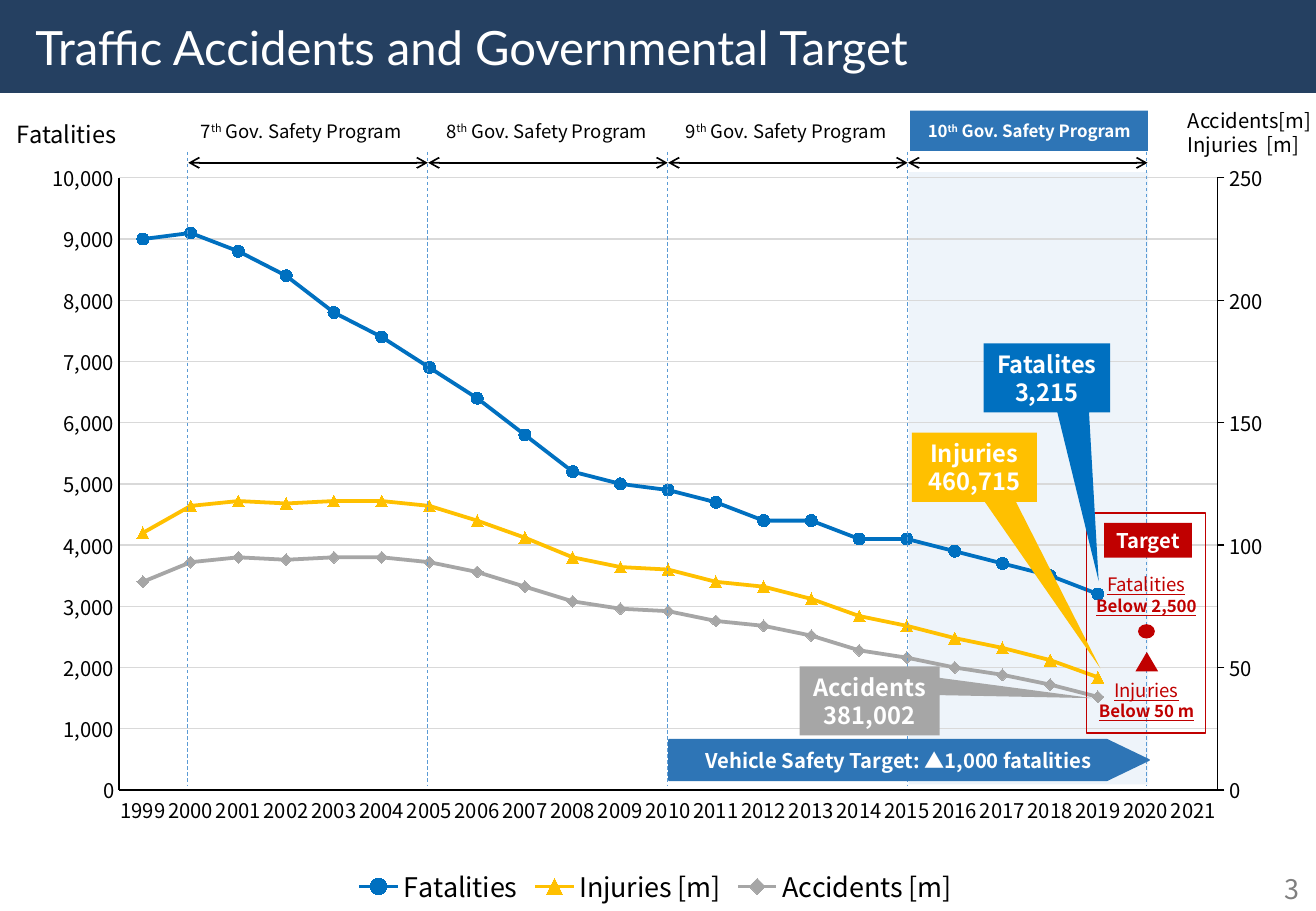
import copy

import pptx
import pptx.chart.axis
import pptx.chart.data
import pptx.dml.color
import pptx.enum.chart
import pptx.enum.dml
import pptx.enum.shapes
import pptx.enum.text
import pptx.oxml.ns
import pptx.oxml.xmlchemy
import pptx.util

Pt = pptx.util.Pt
SHAPE = pptx.enum.shapes.MSO_SHAPE
ALIGN = pptx.enum.text.PP_ALIGN
TICK = pptx.enum.chart.XL_TICK_MARK
MARK = pptx.enum.chart.XL_MARKER_STYLE
qn = pptx.oxml.ns.qn

HUES = {"navy": "254061", "white": "FFFFFF", "black": "000000", "gray": "808080",
        "pale": "DEEBF7", "blue": "0070C0", "gold": "FFC000", "silver": "A6A6A6",
        "grid": "D9D9D9", "steel": "2E75B6", "sky": "5B9BD5", "red": "C00000"}
FONT = "Noto Sans CJK JP"


def hue(name):
    return pptx.dml.color.RGBColor.from_string(HUES[name])


def node(root, tag, **attrs):
    """Append a child element with the given attributes."""
    child = pptx.oxml.xmlchemy.OxmlElement(tag)
    for key, val in attrs.items():
        child.set(key, str(val))
    root.append(child)
    return child


class Deck:
    """Holds the style and the current slide."""

    def __init__(self, wide, high):
        self.prs = pptx.Presentation()
        self.prs.slide_width, self.prs.slide_height = Pt(wide), Pt(high)
        self.slide = self.prs.slides.add_slide(self.prs.slide_layouts[5])

    def style(self, font, size, color, bold=False, line=False, face=FONT):
        font.name, font.size, font.bold = face, Pt(size), bold
        font.underline = line or None
        font.color.rgb = hue(color)

    def stroke(self, line, color, width):
        line.color.rgb = hue(color)
        line.width = Pt(width)

    def words(self, shape, text, sizes, color, bold=(False,), line=False,
              align=ALIGN.CENTER, inset=0, wrap=False):
        """Fill a shape with text; '^' parts off a raised run."""
        frame = shape.text_frame
        frame.text = text.replace("^", "")
        frame.word_wrap = wrap
        frame.vertical_anchor = pptx.enum.text.MSO_ANCHOR.MIDDLE
        frame.margin_left = frame.margin_right = Pt(inset)
        frame.margin_top = frame.margin_bottom = Pt(0)
        for i, para in enumerate(frame.paragraphs):
            para.alignment = align
            parts = text.split("\n")[i].split("^")
            para.runs[0].text = parts[0]
            for part in parts[1:]:
                para.add_run().text = part
            for k, run in enumerate(para.runs):
                self.style(run.font, sizes[i % len(sizes)], color, bold[i % len(bold)], line)
                if k == 1:
                    run._r.get_or_add_rPr().set("baseline", "30000")

    def title(self, text, wide, high):
        box = self.slide.shapes.title
        box.left, box.top, box.width, box.height = Pt(0), Pt(0), Pt(wide), Pt(high)
        box.fill.solid()
        box.fill.fore_color.rgb = hue("navy")
        self.stroke(box.line, "navy", 0.75)
        self.words(box, text, [28], "white", align=ALIGN.LEFT, inset=21, wrap=True)
        self.style(box.text_frame.paragraphs[0].runs[0].font, 28, "white", face="Lato")

    def label(self, place, text, sizes, color="black", **more):
        box = self.slide.shapes.add_textbox(*map(Pt, place))
        self.words(box, text, sizes, color, **more)

    def shape(self, kind, place, fill=None, edge=None, adjust=(), clear=None):
        item = self.slide.shapes.add_shape(kind, *map(Pt, place))
        item.shadow.inherit = False
        for i, val in enumerate(adjust):
            item.adjustments[i] = val
        if fill:
            item.fill.solid()
            item.fill.fore_color.rgb = hue(fill)
        else:
            item.fill.background()
        if edge:
            self.stroke(item.line, edge, 1)
        else:
            item.line.fill.background()
        if clear:
            node(item._element.spPr.find(".//" + qn("a:srgbClr")), "a:alpha", val=clear * 1000)
        return item

    def line(self, ends, color, width, dash=False, heads=False):
        item = self.slide.shapes.add_connector(
            pptx.enum.shapes.MSO_CONNECTOR.STRAIGHT, *map(Pt, ends))
        self.stroke(item.line, color, width)
        if dash:
            item.line.dash_style = pptx.enum.dml.MSO_LINE.DASH
        if heads:
            for tag in ("a:headEnd", "a:tailEnd"):
                node(item.line._get_or_add_ln(), tag, type="arrow")
        node(item._element.spPr, "a:effectLst")

    def axis(self, axis):
        axis.major_tick_mark = axis.minor_tick_mark = TICK.NONE
        self.style(axis.tick_labels.font, 12, "black")
        self.stroke(axis.format.line, "black", 0.75)

    def scale(self, axis, top, step, form):
        axis.minimum_scale, axis.maximum_scale, axis.major_unit = 0, top, step
        axis.tick_labels.number_format = form
        axis.tick_labels.number_format_is_linked = False

    def chart(self, place, cats, rows, frame):
        data = pptx.chart.data.CategoryChartData()
        data.categories = cats
        for name, vals, _, _ in rows:
            data.add_series(name, vals + [None] * (len(cats) - len(vals)))
        chart = self.slide.shapes.add_chart(
            pptx.enum.chart.XL_CHART_TYPE.LINE_MARKERS, *map(Pt, place), data).chart
        self.style(chart.font, 12, "black")
        chart.has_title = False
        chart.has_legend = True
        chart.legend.position = pptx.enum.chart.XL_LEGEND_POSITION.BOTTOM
        chart.legend.include_in_layout = False
        self.style(chart.legend.font, 16, "black")
        chart.plots[0].vary_by_categories = False
        for series, (_, _, color, mark) in zip(chart.plots[0].series, rows):
            series.smooth = False
            self.stroke(series.format.line, color, 2.25)
            series.marker.style, series.marker.size = mark, 7
            series.marker.format.fill.solid()
            series.marker.format.fill.fore_color.rgb = hue(color)
            self.stroke(series.marker.format.line, color, 0.75)
        # Axes
        for axis in (chart.category_axis, chart.value_axis):
            self.axis(axis)
        chart.category_axis._element.find(".//" + qn("a:bodyPr")).set("rot", "0")
        self.scale(chart.value_axis, 10000, 1000, "#,##0")
        chart.value_axis.has_major_gridlines = True
        self.stroke(chart.value_axis.major_gridlines.format.line, "grid", 0.75)
        val = chart.value_axis._element
        if val.find(qn("c:crossBetween")) is None:
            cross = node(val, "c:crossBetween", val="between")
            val.find(qn("c:crosses")).addnext(cross)
        self.second(chart)
        # Plot area
        area = chart._chartSpace.find(".//" + qn("c:plotArea"))
        for old in area.findall(qn("c:layout")):
            area.remove(old)
        outer = node(area, "c:layout")
        area.insert(0, outer)
        spot = node(outer, "c:manualLayout")
        node(spot, "c:layoutTarget", val="inner")
        for key in ("xMode", "yMode"):
            node(spot, "c:" + key, val="edge")
        for key, num in zip("xywh", frame):
            node(spot, "c:" + key, val=num)

    def second(self, chart):
        """Move all but the first series to an axis on the right."""
        left = chart._chartSpace.find(".//" + qn("c:lineChart"))
        right = copy.deepcopy(left)
        left.addnext(right)
        for item in left.findall(qn("c:ser"))[1:]:
            left.remove(item)
        right.remove(right.find(qn("c:ser")))
        cat, val = chart.category_axis._element, chart.value_axis._element
        cat2, val2 = copy.deepcopy(cat), copy.deepcopy(val)
        val.addnext(val2)
        val2.addnext(cat2)
        for tag, num in zip(right.findall(qn("c:axId")), ("7001", "7002")):
            tag.set("val", num)
        for axis, own, other in ((cat2, "7001", "7002"), (val2, "7002", "7001")):
            axis.find(qn("c:axId")).set("val", own)
            axis.find(qn("c:crossAx")).set("val", other)
        pptx.chart.axis.CategoryAxis(cat2).visible = False
        axis = pptx.chart.axis.ValueAxis(val2)
        axis.has_major_gridlines = False
        axis.major_tick_mark = TICK.OUTSIDE
        self.scale(axis, 250, 50, r"#,##0_);[Red]\(#,##0\)")
        val2.find(qn("c:axPos")).set("val", "r")
        val2.find(qn("c:crosses")).set("val", "max")


def main():
    deck = Deck(780, 540)
    deck.title("Traffic Accidents and Governmental Target", 780, 55)
    deck.label((595, 516, 182, 22), "3", [16], "gray", align=ALIGN.RIGHT, inset=7)

    # Chart over the shaded current program
    deck.shape(SHAPE.RECTANGLE, (538.5, 102, 142, 363), "pale", clear=50)
    rows = [
        ("Fatalities", [9000, 9100, 8800, 8400, 7800, 7400, 6900, 6400, 5800, 5200, 5000,
                        4900, 4700, 4400, 4400, 4100, 4100, 3900, 3700, 3500, 3200],
         "blue", MARK.CIRCLE),
        ("Injuries [m]", [105, 116, 118, 117, 118, 118, 116, 110, 103, 95, 91,
                          90, 85, 83, 78, 71, 67, 62, 58, 53, 46], "gold", MARK.TRIANGLE),
        ("Accidents [m]", [85, 93, 95, 94, 95, 95, 93, 89, 83, 77, 74,
                           73, 69, 67, 63, 57, 54, 50, 47, 43, 38], "silver", MARK.DIAMOND)]
    deck.chart((10, 92, 757, 448), [str(year) for year in range(1999, 2022)], rows,
               (0.08, 0.03, 0.86, 0.81))

    # Safety programs
    start, step = 111, 142.2
    for i in range(4):
        left = start + 0.6 + i * step
        deck.line((left, 96.5, left + 142, 96.5), "black", 1, heads=True)
    for num, left in ((7, 116), (8, 261.5), (9, 403.5)):
        deck.label((left, 65.5, 136, 24.5), f"{num}^th^ Gov. Safety Program", [11],
                   align=ALIGN.LEFT, inset=3)
    now = deck.shape(SHAPE.RECTANGLE, (539.5, 65.5, 141, 24), "steel")
    deck.words(now, "10^th^ Gov. Safety Program", [10], "white", bold=[True])

    # Axis titles
    deck.label((10, 71, 60, 17), "Fatalities", [14], align=ALIGN.LEFT)
    deck.label((704, 64, 78, 29), "Accidents[m]\nInjuries  [m]", [12], align=ALIGN.LEFT)

    # Program limits
    for i in range(5):
        left = start + i * step
        deck.line((left, 90, left, 466), "sky", 0.5, dash=True)

    # Target
    for place, text in (((646, 340, 67, 25), "Fatalities\nBelow 2,500"),
                        ((648, 402.5, 63, 25), "Injuries\nBelow 50 m")):
        deck.label(place, text, [11, 10], "red", bold=[False, True], line=True)
    goal = deck.shape(SHAPE.RECTANGLE, (654.5, 310, 52, 20.5), "red")
    deck.words(goal, "Target", [12], "white", bold=[True])
    deck.shape(SHAPE.ISOSCELES_TRIANGLE, (673, 386.5, 13.5, 11.5), "red")
    deck.shape(SHAPE.OVAL, (674.5, 370, 10, 8.5), "red")
    deck.shape(SHAPE.RECTANGLE, (644, 304, 70.5, 130.5), edge="red")
    arrow = deck.shape(SHAPE.PENTAGON, (396.5, 438.5, 284.5, 24), "steel", "steel", [1.04])
    deck.words(arrow, "Vehicle Safety Target: ▲1,000 fatalities", [12], "white", bold=[True])

    # Callouts
    for place, tip, fill, text in (
            ((583, 203.5, 75, 41), (0.41, 2.94), "blue", "Fatalites\n3,215"),
            ((540.5, 256.5, 74, 41), (1.01, 2.91), "gold", "Injuries\n460,715"),
            ((474, 395, 83, 41), (1.59, -0.04), "silver", "Accidents\n381,002")):
        call = deck.shape(SHAPE.RECTANGULAR_CALLOUT, place, fill, adjust=tip)
        deck.words(call, text, [14], "white", bold=[True])

    deck.prs.save("out.pptx")


if __name__ == "__main__":
    main()
